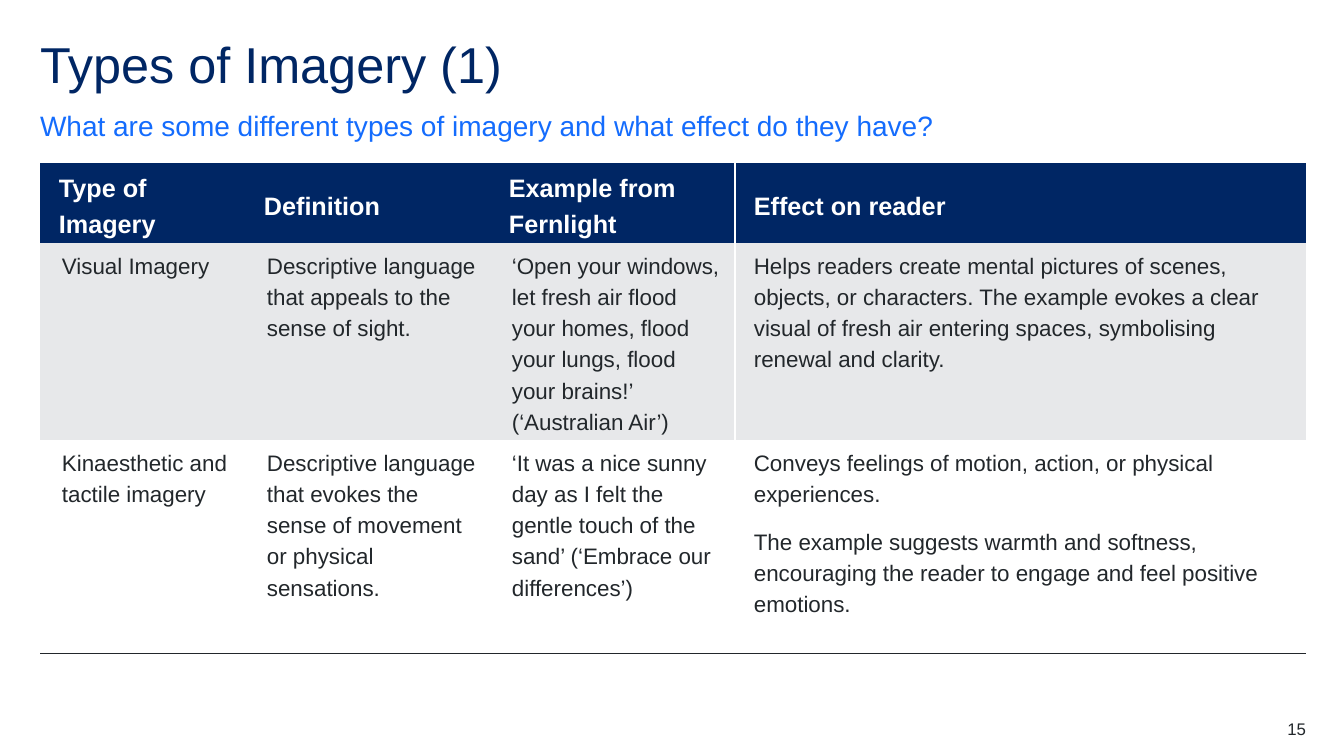
from lxml.etree import SubElement
from pptx import Presentation
from pptx.dml.color import RGBColor
from pptx.enum.text import MSO_ANCHOR, MSO_AUTO_SIZE, PP_ALIGN
from pptx.oxml import parse_xml
from pptx.oxml.ns import nsdecls, qn
from pptx.util import Emu, Pt

SCALE = 914400 / 100.8
COLORS = {"navy": "002664", "blue": "146CFD", "ink": "22272B",
          "gray": "E7E8EA", "white": "FFFFFF"}
PLAIN = "{2D5ABB26-0587-4C30-8999-92F81FD0307C}"
WIDTHS = [205, 245, 245, 571]
HEIGHTS = [80, 197, 213]
FILLS = ["navy", "gray", "white"]
ROWS = [
    ["Type of Imagery", "Definition", "Example from Fernlight",
     "Effect on reader"],
    ["Visual Imagery",
     "Descriptive language that appeals to the sense of sight.",
     "‘Open your windows, let fresh air flood your homes, flood your lungs, "
     "flood your brains!’ (‘Australian Air’)",
     "Helps readers create mental pictures of scenes, objects, or characters. "
     "The example evokes a clear visual of fresh air entering spaces, "
     "symbolising renewal and clarity."],
    ["Kinaesthetic and tactile imagery",
     "Descriptive language that evokes the sense of movement or physical "
     "sensations.",
     "‘It was a nice sunny day as I felt the gentle touch of the sand’ "
     "(‘Embrace our differences’)",
     "Conveys feelings of motion, action, or physical experiences.\n"
     "The example suggests warmth and softness, encouraging the reader to "
     "engage and feel positive emotions."],
]


def px(n):
    return Emu(round(n * SCALE))


def style(para, size, color, bold=False, line=1.0, after=0, indent=0):
    font = para.font
    font.name, font.size, font.bold = "Arial", Pt(size), bold
    font.color.rgb = RGBColor.from_string(COLORS[color])
    para.line_spacing = line
    para.space_before, para.space_after = Pt(0), Pt(after)
    props = para._p.get_or_add_pPr()
    props.set("marL", str(px(indent)))
    props.set("indent", "0")


def write(shape, box, text, size, color, anchor=MSO_ANCHOR.TOP, **look):
    shape.left, shape.top, shape.width, shape.height = map(px, box)
    frame = shape.text_frame
    frame.text = text
    frame.word_wrap = True
    frame.auto_size = MSO_AUTO_SIZE.NONE
    frame.vertical_anchor = anchor
    frame.margin_left = frame.margin_right = 0
    frame.margin_top = frame.margin_bottom = 0
    para = frame.paragraphs[0]
    style(para, size, color, **look)
    return para


def border(cell, edges):
    # Edges come in schema order: L, R, T, B
    props = cell._tc.get_or_add_tcPr()
    for spot, (edge, color) in enumerate(edges):
        props.insert(spot, parse_xml(
            f'<a:ln{edge} {nsdecls("a")} w="12700"><a:solidFill>'
            f'<a:srgbClr val="{COLORS[color]}"/></a:solidFill></a:ln{edge}>'))


def fill_cell(cell, text, row, col):
    head = row == 0
    cell.text = text
    cell.fill.solid()
    cell.fill.fore_color.rgb = RGBColor.from_string(COLORS[FILLS[row]])
    cell.vertical_anchor = MSO_ANCHOR.MIDDLE if head else MSO_ANCHOR.TOP
    side = 7 if head or col == 3 else 10
    cell.margin_left = cell.margin_right = px(side)
    cell.margin_top = cell.margin_bottom = px(5)
    for para in cell.text_frame.paragraphs:
        style(para, 18 if head else 16, "white" if head else "ink",
              bold=head, line=1.25, after=12, indent=12)
    edges = {2: [("R", "white")], 3: [("L", "white")]}.get(col, [])
    if row == len(ROWS) - 1:
        edges = edges + [("B", "ink")]
    border(cell, edges)


def add_grid(slide, left, top):
    table = slide.shapes.add_table(
        len(ROWS), len(WIDTHS), px(left), px(top),
        px(sum(WIDTHS)), px(sum(HEIGHTS))).table
    table.horz_banding = False
    table._tbl.tblPr.find(qn("a:tableStyleId")).text = PLAIN
    for col, width in zip(table.columns, WIDTHS):
        col.width = px(width)
    for row, height in zip(table.rows, HEIGHTS):
        row.height = px(height)
    for r, texts in enumerate(ROWS):
        for c, text in enumerate(texts):
            fill_cell(table.cell(r, c), text, r, c)


def main():
    deck = Presentation()
    deck.slide_width, deck.slide_height = px(1344), px(756)
    slide = deck.slides.add_slide(deck.slide_layouts[1])

    # Title and question
    title = write(slide.shapes.title, (40, 40, 1266, 60),
                  "Types of Imagery (1)", 36, "navy", line=0.9)
    title.alignment = PP_ALIGN.LEFT
    body = write(slide.placeholders[1], (40, 108, 1266, 34),
                 "What are some different types of imagery and what effect "
                 "do they have?", 20, "blue", MSO_ANCHOR.BOTTOM,
                 line=1.5, after=12)
    props = body._p.get_or_add_pPr()
    mark = SubElement(props, qn("a:buNone"))
    props.find(qn("a:defRPr")).addprevious(mark)

    # Imagery table
    add_grid(slide, 40, 163)

    # Page number
    page = slide.shapes.add_textbox(0, 0, 0, 0)
    number = write(page, (1227, 719, 79, 20), "15", 12, "ink")
    number.alignment = PP_ALIGN.RIGHT

    deck.save("out.pptx")


if __name__ == "__main__":
    main()
